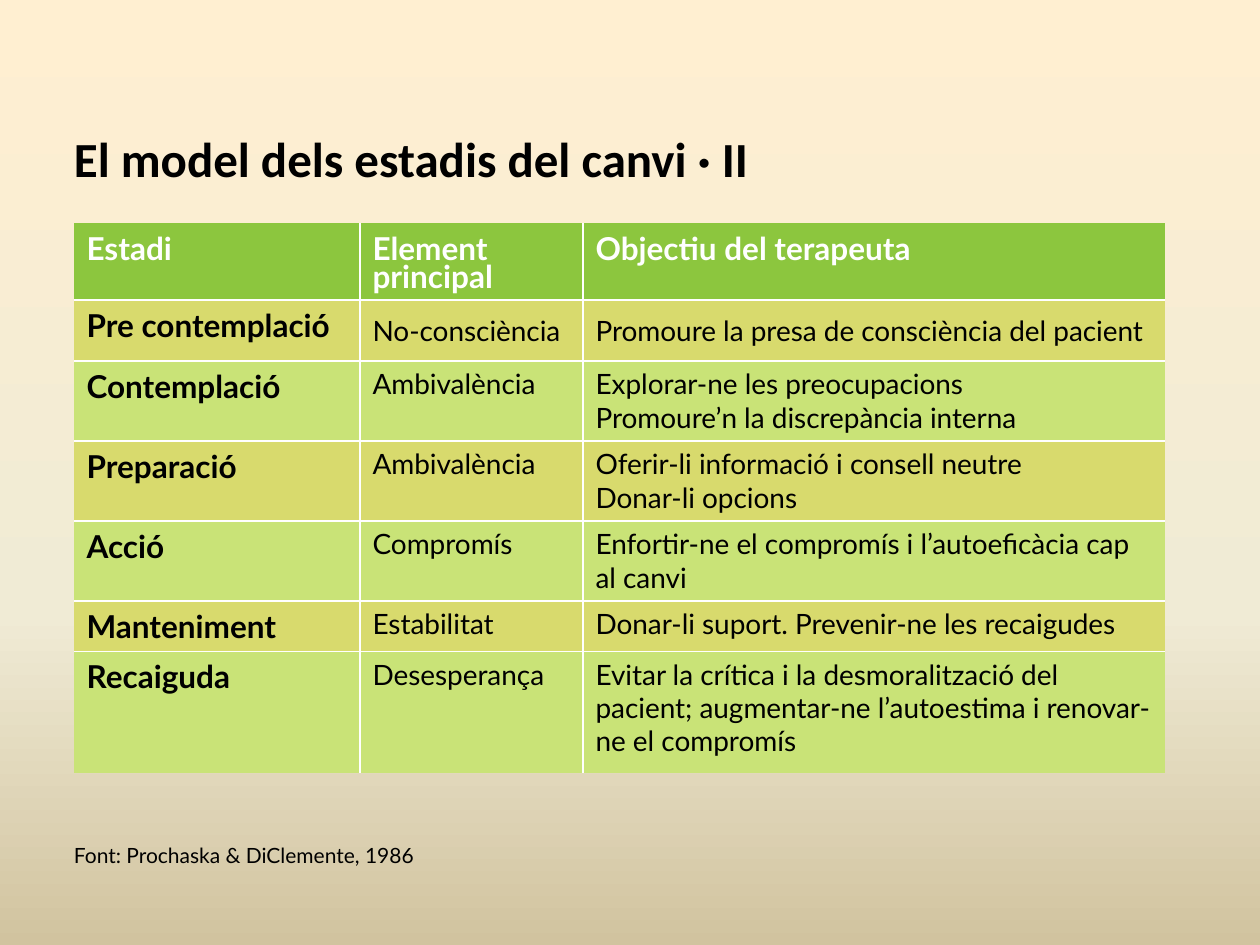
from dataclasses import dataclass

import pptx
import pptx.dml.color
import pptx.enum.text
import pptx.oxml.ns
import pptx.util
from lxml import etree

PX = 914400 // 126
COLORS = {
    "black": "000000", "white": "FFFFFF", "header": "8CC63E",
    "olive": "D8DA6D", "lime": "C9E377",
}
BACKGROUND = [(0, "FFEFD1"), (65, "F0EBD5"), (100, "D1C39F")]
LEFT = 74
COLUMN_WIDTHS = [286, 223, 582]
ANCHOR = pptx.enum.text.MSO_ANCHOR
qn = pptx.oxml.ns.qn


@dataclass
class Label:
    text: str
    top: int
    width: int
    height: int
    size: int
    font: str
    bold: bool = False
    anchor: ANCHOR = ANCHOR.TOP


@dataclass
class Row:
    height: int
    stage: str
    element: str
    goal: str
    anchor: ANCHOR = ANCHOR.TOP


LABELS = [
    Label("El model dels estadis del canvi · II", 89, 1071, 98, 28, "Calibri", True, ANCHOR.BOTTOM),
    Label("Font: Prochaska & DiClemente, 1986", 843, 997, 25, 12, "Lato"),
]
ROWS = [
    Row(77, "Estadi", "Element\nprincipal", "Objectiu del terapeuta"),
    Row(61, "Pre contemplació", "No-consciència",
        "Promoure la presa de consciència del pacient", ANCHOR.MIDDLE),
    Row(80, "Contemplació", "Ambivalència",
        "Explorar-ne les preocupacions\nPromoure’n la discrepància interna"),
    Row(80, "Preparació", "Ambivalència",
        "Oferir-li informació i consell neutre\vDonar-li opcions"),
    Row(80, "Acció", "Compromís", "Enfortir-ne el compromís i l’autoeficàcia cap al canvi"),
    Row(50, "Manteniment", "Estabilitat", "Donar-li suport. Prevenir-ne les recaigudes"),
    Row(122, "Recaiguda", "Desesperança",
        "Evitar la crítica i la desmoralització del pacient; "
        "augmentar-ne l’autoestima i renovar-ne el compromís"),
]


def px(n: int) -> pptx.util.Emu:
    return pptx.util.Emu(n * PX)


def rgb(name: str) -> pptx.dml.color.RGBColor:
    return pptx.dml.color.RGBColor.from_string(COLORS[name])


def style(p, size: int, font: str, color: str, bold: bool) -> None:
    p.font.size = pptx.util.Pt(size)
    p.font.name = font
    p.font.bold = bold
    p.font.color.rgb = rgb(color)


def set_background(s) -> None:
    fill = s.background.fill
    fill.gradient()
    fill.gradient_angle = 270
    stops = next(s.background._cSld.iter(qn("a:gsLst")))
    for stop in list(stops):
        stops.remove(stop)
    for position, color in BACKGROUND:
        stop = etree.SubElement(stops, qn("a:gs"), pos=str(position * 1000))
        etree.SubElement(stop, qn("a:srgbClr"), val=color)


def add_label(s, label: Label) -> None:
    sp = s.shapes.add_textbox(px(LEFT), px(label.top), px(label.width), px(label.height))
    tf = sp.text_frame
    tf.word_wrap = True
    tf.margin_left = tf.margin_right = tf.margin_top = tf.margin_bottom = 0
    tf.vertical_anchor = label.anchor
    tf.text = label.text
    p = tf.paragraphs[0]
    if label.bold:
        p.line_spacing = pptx.util.Pt(label.size)
    style(p, label.size, label.font, "black", label.bold)


def set_borders(cell, inner: dict[str, bool]) -> None:
    tc_pr = cell._tc.get_or_add_tcPr()
    for i, (side, shown) in enumerate(inner.items()):
        ln = etree.Element(qn(f"a:{side}"), w="12700")
        if shown:
            fill = etree.SubElement(ln, qn("a:solidFill"))
            etree.SubElement(fill, qn("a:srgbClr"), val=COLORS["white"])
        else:
            etree.SubElement(ln, qn("a:noFill"))
        tc_pr.insert(i, ln)


def add_stage_table(s, rows: list[Row]) -> None:
    height = sum(row.height for row in rows)
    table = s.shapes.add_table(len(rows), len(COLUMN_WIDTHS), px(LEFT), px(223),
                               px(sum(COLUMN_WIDTHS)), px(height)).table
    table.horz_banding = False
    for column, width in zip(table.columns, COLUMN_WIDTHS):
        column.width = px(width)
    for i, row in enumerate(rows):
        table.rows[i].height = px(row.height)
        header = i == 0
        fill = "header" if header else ("lime", "olive")[i % 2]
        for j, text in enumerate((row.stage, row.element, row.goal)):
            cell = table.cell(i, j)
            cell.fill.solid()
            cell.fill.fore_color.rgb = rgb(fill)
            cell.vertical_anchor = row.anchor if j else ANCHOR.TOP
            cell.text = text
            strong = header or j == 0
            for k, p in enumerate(cell.text_frame.paragraphs):
                if header and k:
                    p.line_spacing = 0.7
                style(p, 18 if strong else 16, "Lato", "white" if header else "black", strong)
            set_borders(cell, {"lnL": j > 0, "lnR": j < len(COLUMN_WIDTHS) - 1,
                               "lnT": i > 0, "lnB": i < len(rows) - 1})


def main() -> None:
    prs = pptx.Presentation()
    prs.slide_width = pptx.util.Inches(10)
    prs.slide_height = pptx.util.Inches(7.5)
    s = prs.slides.add_slide(prs.slide_layouts[6])
    set_background(s)
    for label in LABELS:
        add_label(s, label)
    add_stage_table(s, ROWS)
    prs.save("out.pptx")


if __name__ == "__main__":
    main()
